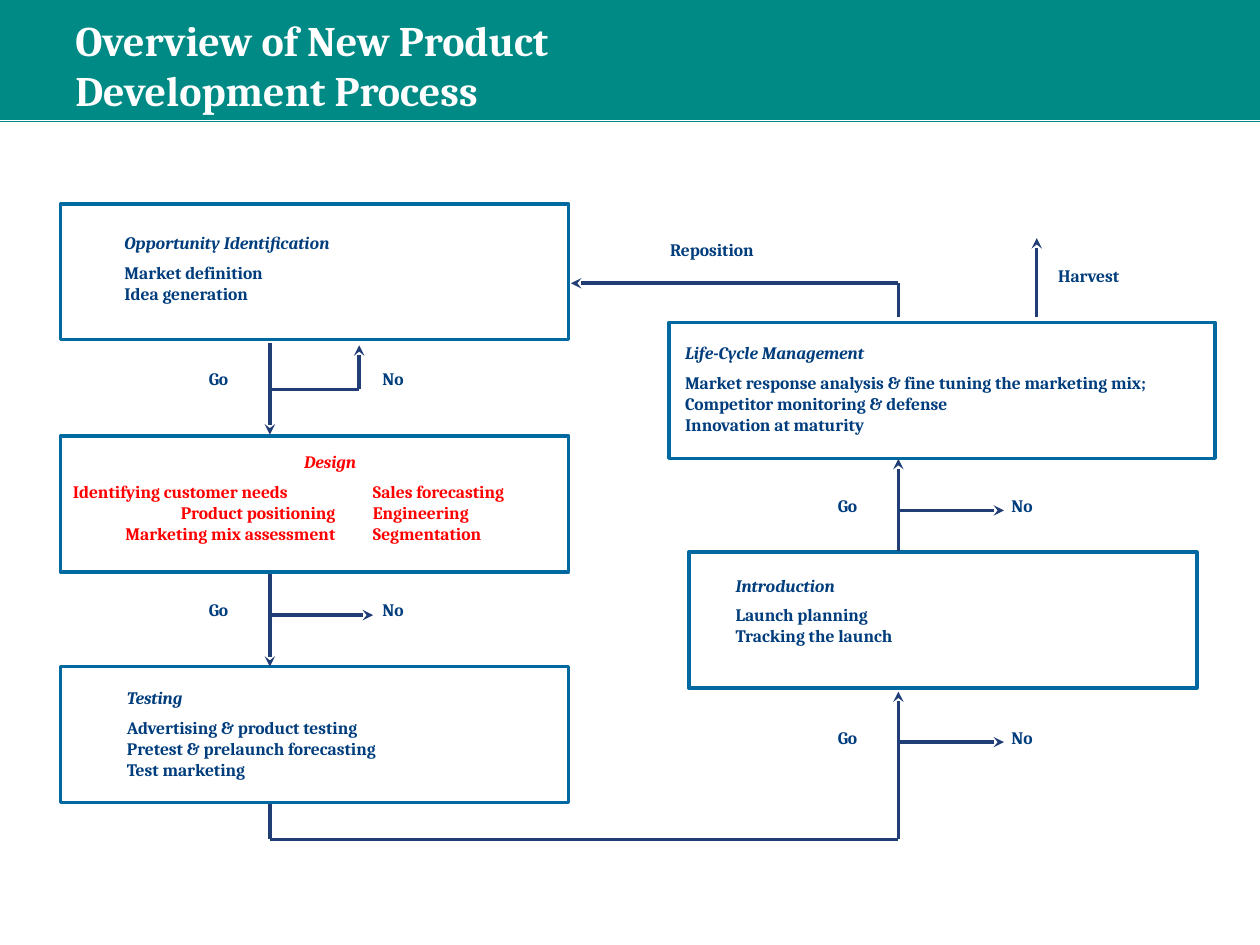
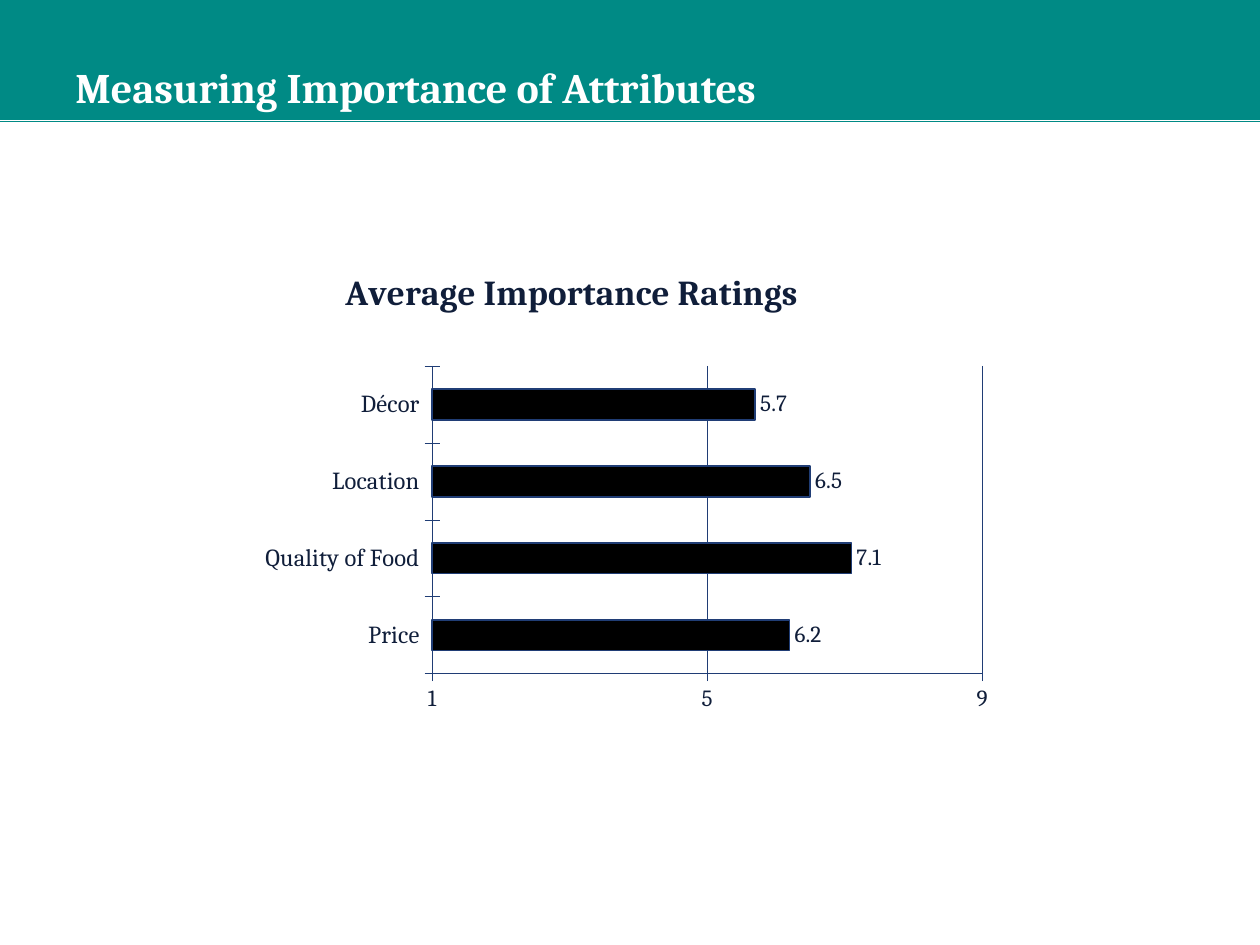
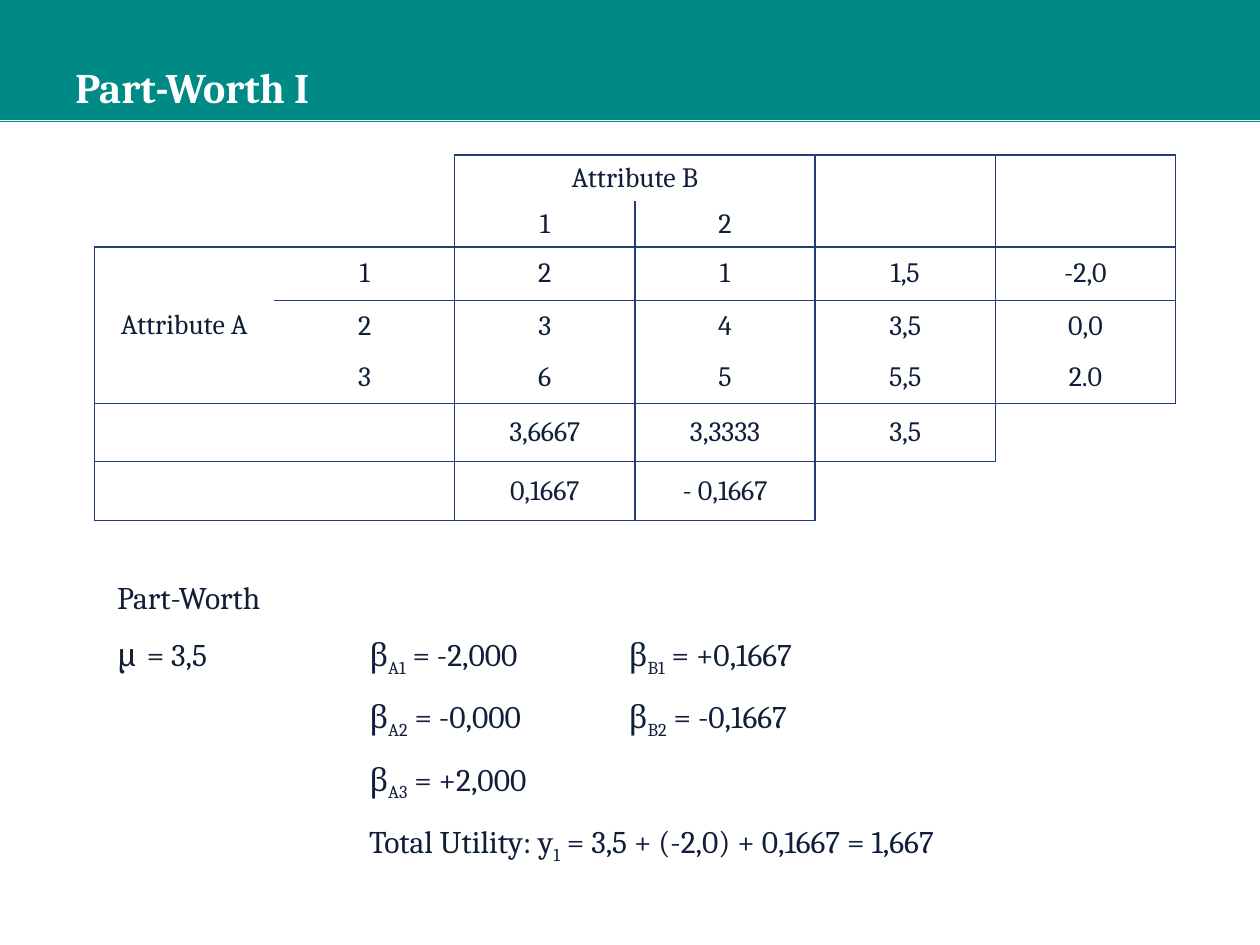
from dataclasses import dataclass
from typing import Any

from lxml.etree import SubElement
from pptx import Presentation
from pptx.chart.data import CategoryChartData
from pptx.dml.color import RGBColor
from pptx.enum.chart import XL_CHART_TYPE as ChartType, XL_LABEL_POSITION as LabelPosition
from pptx.enum.chart import XL_TICK_MARK as TickMark
from pptx.enum.shapes import MSO_CONNECTOR as Connector, MSO_SHAPE as ShapeKind
from pptx.enum.text import MSO_ANCHOR as Anchor, PP_ALIGN as Align
from pptx.oxml import parse_xml
from pptx.oxml.ns import nsdecls, qn
from pptx.util import Cm, Pt

TEAL, WHITE, BLACK, RED = "008A85", "FFFFFF", "000000", "FF0000"
NAVY, INK, LABEL_BLUE, BOX_BLUE = "203D75", "101E3A", "003D7D", "006AA0"
FONT = "Cambria"
NO_GRID_STYLE = "{2D5ABB26-0587-4C30-8999-92F81FD0307C}"
Point = tuple[float, float]
TabStops = tuple[tuple[float, str], ...]


@dataclass(frozen=True)
class Box:
    """A rectangle in centimetres."""
    left: float
    top: float
    width: float
    height: float

    def lengths(self) -> list[Cm]:
        """Return the four values as lengths."""
        return [Cm(value) for value in (self.left, self.top, self.width, self.height)]


@dataclass(frozen=True)
class Stage:
    """A framed stage of the process with its heading and body."""
    frame: Box
    text_box: Box
    heading: str
    body: str
    color: str = LABEL_BLUE
    align: Align = Align.LEFT
    tabs: TabStops = ()


@dataclass(frozen=True)
class Label:
    """A short caption beside an arrow."""
    text: str
    left: float
    top: float
    width: float = 1.04


@dataclass(frozen=True)
class Route:
    """A chain of straight segments whose last one ends in an arrowhead."""
    points: tuple[Point, ...]


@dataclass(frozen=True)
class Region:
    """An outlined block of table cells."""
    top: int
    left: int
    bottom: int
    right: int

    def edges(self, row: int, column: int) -> set[str]:
        """Return the outline edges that a cell carries."""
        if not (self.top <= row <= self.bottom and self.left <= column <= self.right):
            return set()
        checks = {"L": column == self.left, "R": column == self.right,
                  "T": row == self.top, "B": row == self.bottom}
        return {edge for edge, holds in checks.items() if holds}


GO_NO_ROWS = ((3.96, 7.29), (3.96, 11.96), (16.64, 9.86), (16.64, 14.53))
LABELS = [Label(text, left + shift, top) for left, top in GO_NO_ROWS
          for text, shift in (("Go", 0), ("No", 3.5))]
LABELS += [Label("Reposition", 13.26, 4.7, 2.51), Label("Harvest", 21.08, 5.21, 1.98)]

STAGES = [
    Stage(Box(1.22, 8.79, 10.24, 2.74), Box(1.22, 8.97, 10.87, 2.18), "Design",
          "Identifying customer needs\t\tSales forecasting\v\tProduct positioning\tEngineering"
          "\v\tMarketing mix assessment\tSegmentation", RED, Align.CENTER,
          ((5.29, "r"), (6.05, "l"))),
    Stage(Box(1.22, 4.11, 10.24, 2.74), Box(2.26, 4.55, 5.49, 1.75),
          "Opportunity Identification", "Market definition\vIdea generation"),
    Stage(Box(1.22, 13.44, 10.24, 2.74), Box(2.31, 13.72, 7.98, 2.18), "Testing",
          "Advertising & product testing\vPretest & prelaunch forecasting\vTest marketing"),
    Stage(Box(13.89, 11.13, 10.24, 2.74), Box(14.58, 11.46, 8.81, 1.75),
          "Introduction", "Launch planning\vTracking the launch"),
    Stage(Box(13.49, 6.5, 11, 2.74), Box(13.56, 6.78, 11.25, 2.18), "Life-Cycle Management",
          "Market response analysis & fine tuning the marketing mix; "
          "Competitor monitoring & defense\vInnovation at maturity"),
]

ROUTES = [
    Route(((5.44, 6.91), (5.44, 8.76))),
    Route(((5.44, 7.85), (7.24, 7.85), (7.24, 6.96))),
    Route(((5.44, 11.58), (5.44, 13.44))),
    Route(((5.44, 12.4), (7.52, 12.4))),
    Route(((5.44, 16.21), (5.44, 16.92), (18.11, 16.92), (18.11, 13.94))),
    Route(((18.11, 14.96), (20.24, 14.96))),
    Route(((18.11, 11.1), (18.11, 9.25))),
    Route(((18.11, 10.29), (20.24, 10.29))),
    Route(((18.11, 6.4), (18.11, 5.71), (11.51, 5.71))),
    Route(((20.9, 6.4), (20.9, 4.8))),
]

ROW_HEIGHTS = (0.79, 0.61, 1.07, 1.04, 1.04, 1.17, 1.19)
CELL_ROWS = [
    ("", "", "Attribute B", "", "", ""),
    ("", "", "1", "2", "", ""),
    ("Attribute A", "1", "2", "1", "1,5", "-2,0"),
    ("", "2", "3", "4", "3,5", "0,0"),
    ("", "3", "6", "5", "5,5", "2.0"),
    ("", "", "3,6667", "3,3333", "3,5", ""),
    ("", "", "0,1667", "- 0,1667", "", ""),
]
MERGES = [Region(0, 2, 0, 3), Region(0, 4, 1, 4), Region(0, 5, 1, 5),
          Region(2, 0, 4, 0), Region(5, 0, 5, 1), Region(6, 0, 6, 1)]
COLUMN_BANDS = ((0, 1), (2, 3), (4, 4), (5, 5))
ROW_BANDS = (((0, 1), COLUMN_BANDS[1:]), ((2, 4), COLUMN_BANDS),
             ((5, 5), COLUMN_BANDS[:3]), ((6, 6), COLUMN_BANDS[:2]))
REGIONS = [Region(top, left, bottom, right) for (top, bottom), bands in ROW_BANDS
           for left, right in bands]

FORMULA_TABS = tuple((stop, "l") for stop in (0.6, 5.08, 10.31))
FORMULAS = [
    ["Part-Worth"],
    ["μ\t= 3,5\tβ", "A1", " = -2,000\tβ", "B1", " = +0,1667"],
    ["\t\tβ", "A2", " = -0,000\tβ", "B2", " = -0,1667"],
    ["\t\tβ", "A3", " = +2,000"],
    ["\t\tTotal Utility: y", "1", " = 3,5 + (-2,0) + 0,1667 = 1,667"],
]


def rgb(color: str) -> RGBColor:
    """Turn a hex string into a colour."""
    return RGBColor.from_string(color)


def set_values(target: Any, values: dict[str, Any]) -> None:
    """Set each named attribute of the target."""
    for name, value in values.items():
        setattr(target, name, value)


def set_font(font: Any, size: float, color: str, bold: bool = False, italic: bool = False) -> None:
    """Give a font its size, colour and style."""
    set_values(font, {"name": FONT, "size": Pt(size), "bold": bold, "italic": italic})
    font.color.rgb = rgb(color)


def set_line(line: Any, color: str, width: float) -> None:
    """Give a line its colour and width."""
    line.color.rgb = rgb(color)
    line.width = Pt(width)


def add_tabs(paragraph: Any, tabs: TabStops) -> None:
    """Give a paragraph its tab stops."""
    if tabs:
        tab_list = SubElement(paragraph._p.get_or_add_pPr(), qn("a:tabLst"))
        for position, align in tabs:
            SubElement(tab_list, qn("a:tab"), pos=str(int(Cm(position))), algn=align)


def add_text_frame(slide: Any, box: Box, anchor: Anchor = Anchor.TOP) -> Any:
    """Add a wrapping text box and return its frame."""
    frame = slide.shapes.add_textbox(*box.lengths()).text_frame
    set_values(frame, {"word_wrap": True, "vertical_anchor": anchor})
    return frame


def write_paragraph(paragraph: Any, text: str, size: float, color: str, bold: bool = False,
                    italic: bool = False) -> None:
    """Write text into a paragraph with one font."""
    paragraph.text = text
    for run in paragraph.runs:
        set_font(run.font, size, color, bold, italic)


def add_rectangle(slide: Any, box: Box, fill: str, line: str, width: float) -> None:
    """Add a flat filled rectangle."""
    shape = slide.shapes.add_shape(ShapeKind.RECTANGLE, *box.lengths())
    shape.shadow.inherit = False
    shape.fill.solid()
    shape.fill.fore_color.rgb = rgb(fill)
    set_line(shape.line, line, width)


def add_segment(slide: Any, start: Point, end: Point, color: str, width: float,
                arrow: bool = False) -> None:
    """Add a straight connector, with an arrowhead at its end if asked."""
    connector = slide.shapes.add_connector(
        Connector.STRAIGHT, *(Cm(value) for value in (*start, *end)))
    set_line(connector.line, color, width)
    if arrow:
        SubElement(connector.line._get_or_add_ln(), qn("a:tailEnd"), type="stealth")
    SubElement(connector._element.spPr, qn("a:effectLst"))


def add_titled_slide(presentation: Any, title: str, top: float = 1.17) -> Any:
    """Add a blank slide with the teal band and a title."""
    slide = presentation.slides.add_slide(presentation.slide_layouts[6])
    add_rectangle(slide, Box(0, 0, 25.4, 2.41), TEAL, TEAL, 0.75)
    add_segment(slide, (0, 2.44), (25.4, 2.44), TEAL, 0.5)
    frame = add_text_frame(slide, Box(1.27, top, 19.6, 1.14), Anchor.MIDDLE)
    write_paragraph(frame.paragraphs[0], title, 24, WHITE, bold=True)
    return slide


def add_stage(slide: Any, stage: Stage) -> None:
    """Add the frame and the text of a stage."""
    add_rectangle(slide, stage.frame, WHITE, BOX_BLUE, 2)
    frame = add_text_frame(slide, stage.text_box)
    heading, body = frame.paragraphs[0], frame.add_paragraph()
    heading.alignment = stage.align
    write_paragraph(heading, stage.heading, 10, stage.color, bold=True, italic=True)
    body.space_before = Pt(5)
    add_tabs(body, stage.tabs)
    write_paragraph(body, stage.body, 10, stage.color, bold=True)


def add_route(slide: Any, route: Route) -> None:
    """Add the segments of a route."""
    last = route.points[-1]
    for start, end in zip(route.points, route.points[1:]):
        add_segment(slide, start, end, NAVY, 2, arrow=end == last)


def build_process_slide(presentation: Any) -> None:
    """Build the flow of the development process."""
    slide = add_titled_slide(presentation, "Overview of New Product\vDevelopment Process", 0.74)
    for stage in STAGES:
        add_stage(slide, stage)
    for route in ROUTES:
        add_route(slide, route)
    for label in LABELS:
        frame = add_text_frame(slide, Box(label.left, label.top, label.width, 0.69))
        write_paragraph(frame.paragraphs[0], label.text, 10, LABEL_BLUE, bold=True)


def place_manually(parent: Any, target: str, values: dict[str, float]) -> None:
    """Fix the place of a chart part as fractions of the chart."""
    inner = '<c:layoutTarget val="inner"/>' if target == "inner" else ""
    modes = "".join(f'<c:{axis}Mode val="edge"/>' for axis in "xy")
    sizes = "".join(f'<c:{name} val="{value}"/>' for name, value in values.items())
    for old_layout in parent.findall(qn("c:layout")):
        parent.remove(old_layout)
    layout = parse_xml(f'<c:layout {nsdecls("c")}><c:manualLayout>{inner}{modes}{sizes}'
                       '</c:manualLayout></c:layout>')
    text = parent.find(qn("c:tx"))
    parent.insert(0 if text is None else 1, layout)


def build_ratings_slide(presentation: Any) -> None:
    """Build the bar chart of importance ratings."""
    slide = add_titled_slide(presentation, "Measuring Importance of Attributes")
    data = CategoryChartData()
    data.categories = ["Price", "Quality of Food", "Location", "Décor"]
    data.add_series("Series 1", [6.2, 7.1, 6.5, 5.7])
    chart = slide.shapes.add_chart(
        ChartType.BAR_CLUSTERED, *Box(4.65, 5, 15.62, 10.34).lengths(), data).chart
    set_font(chart.font, 14, INK)
    set_values(chart, {"has_legend": False, "has_title": True})
    title = chart.chart_title
    write_paragraph(title.text_frame.paragraphs[0], "Average Importance Ratings", 20, INK, bold=True)
    place_manually(title._element, "outer", {"x": 0.14, "y": 0.03})
    place_manually(chart._chartSpace.chart.plotArea, "inner",
                   {"x": 0.26, "y": 0.23, "w": 0.71, "h": 0.6})
    for axis, size in ((chart.category_axis, 14), (chart.value_axis, 13.2)):
        set_values(axis, {"major_tick_mark": TickMark.CROSS, "minor_tick_mark": TickMark.NONE})
        set_font(axis.tick_labels.font, size, INK)
        set_line(axis.format.line, NAVY, 0.23)
    set_values(chart.value_axis, {"minimum_scale": 1, "maximum_scale": 9, "major_unit": 4,
                                  "has_major_gridlines": True})
    set_line(chart.value_axis.major_gridlines.format.line, NAVY, 0.23)
    plot = chart.plots[0]
    set_values(plot, {"gap_width": 150, "vary_by_categories": False, "has_data_labels": True})
    set_values(plot.data_labels, {"show_value": True, "position": LabelPosition.OUTSIDE_END})
    set_font(plot.data_labels.font, 13.2, INK)
    bars = plot.series[0].format
    bars.fill.solid()
    bars.fill.fore_color.rgb = rgb(BLACK)
    set_line(bars.line, NAVY, 0.94)


def outline_cell(cell: Any, edges: set[str]) -> None:
    """Draw the given edges of a cell."""
    properties = cell._tc.get_or_add_tcPr()
    for index, edge in enumerate(edge for edge in "LRTB" if edge in edges):
        properties.insert(index, parse_xml(
            f'<a:ln{edge} {nsdecls("a")} w="{int(Pt(1))}"><a:solidFill><a:srgbClr val="{NAVY}"/>'
            f'</a:solidFill></a:ln{edge}>'))


def add_design_table(slide: Any) -> None:
    """Add the table that crosses both attributes."""
    box = Box(1.9, 3.12, 21.8, sum(ROW_HEIGHTS))
    table = slide.shapes.add_table(len(CELL_ROWS), len(CELL_ROWS[0]), *box.lengths()).table
    set_values(table, {"first_row": False, "horz_banding": False})
    table._tbl.tblPr.find(qn("a:tableStyleId")).text = NO_GRID_STYLE
    for row, height in zip(table.rows, ROW_HEIGHTS):
        row.height = Cm(height)
    for row_index, texts in enumerate(CELL_ROWS):
        for column_index, text in enumerate(texts):
            cell = table.cell(row_index, column_index)
            cell.vertical_anchor = Anchor.MIDDLE
            cell.fill.background()
            paragraph = cell.text_frame.paragraphs[0]
            paragraph.alignment = Align.CENTER
            if text:
                write_paragraph(paragraph, text, 16, INK)
            else:
                SubElement(paragraph._p, qn("a:endParaRPr"), sz="1600")
            outline_cell(cell, set().union(
                *(region.edges(row_index, column_index) for region in REGIONS)))
    for merge in MERGES:
        table.cell(merge.top, merge.left).merge(table.cell(merge.bottom, merge.right))


def add_formulas(slide: Any) -> None:
    """Add the part-worth formulas, where every second piece is a subscript."""
    frame = add_text_frame(slide, Box(2.11, 11.53, 22, 6.02))
    for index, pieces in enumerate(FORMULAS):
        paragraph = frame.add_paragraph() if index else frame.paragraphs[0]
        if index:
            paragraph.space_before = Pt(11)
        add_tabs(paragraph, FORMULA_TABS)
        for position, piece in enumerate(pieces):
            run = paragraph.add_run()
            run.text = piece
            set_font(run.font, 18, INK)
            if position % 2:
                run.font._element.set("baseline", "-25000")


def build_part_worth_slide(presentation: Any) -> None:
    """Build the part-worth table and its formulas."""
    slide = add_titled_slide(presentation, "Part-Worth I")
    add_design_table(slide)
    add_formulas(slide)


def main() -> None:
    """Build and save the presentation."""
    presentation = Presentation()
    set_values(presentation, {"slide_width": Cm(25.4), "slide_height": Cm(19.05)})
    build_process_slide(presentation)
    build_ratings_slide(presentation)
    build_part_worth_slide(presentation)
    presentation.save("out.pptx")


if __name__ == "__main__":
    main()
